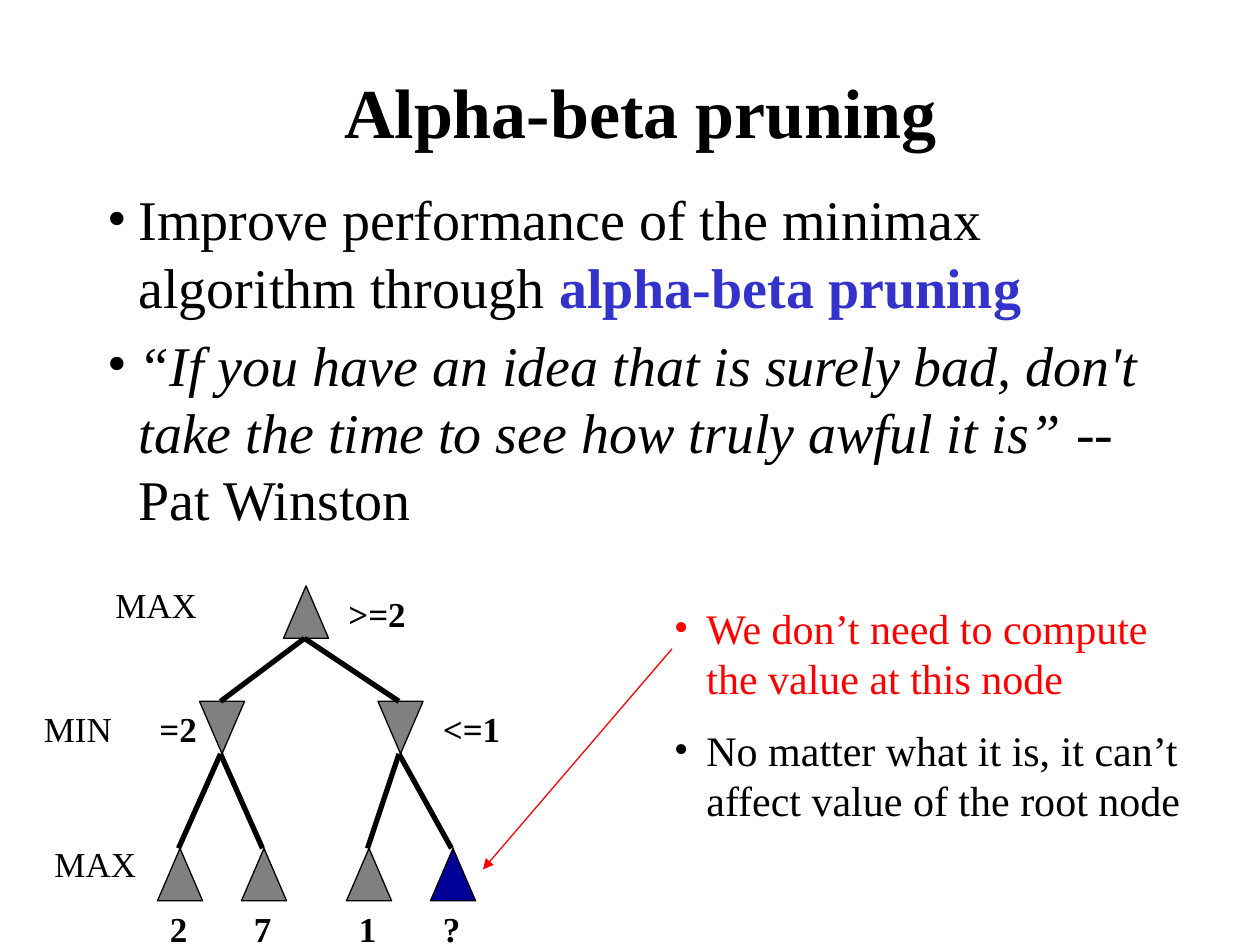
from lxml.etree import SubElement as Sub
from pptx import Presentation
from pptx.dml.color import RGBColor as Rgb
from pptx.enum.shapes import MSO_CONNECTOR as Conn, MSO_SHAPE as Geo
from pptx.enum.text import MSO_ANCHOR as Anchor, MSO_AUTO_SIZE as Fit, PP_ALIGN as Align
from pptx.oxml.ns import qn
from pptx.util import Pt

PX = 7620
FONT = "Times New Roman"
HEX = {"black": "000000", "gray": "808080", "navy": "000099",
       "blue": "3333CC", "red": "FF0000"}

TITLE = "Alpha-beta pruning"
POINTS = [
    [("Improve performance of the minimax algorithm through ", "black", False, False),
     ("alpha-beta pruning", "blue", True, False)],
    [("“If you have an idea that is surely bad, don't take the time to see "
      "how truly awful it is”", "black", False, True),
     (" -- Pat Winston", "black", False, False)],
]
NOTES = [
    [("We don’t need to compute the value at this node", "red", False, False)],
    [("No matter what it is, it can’t affect value of the root node",
      "black", False, False)],
]
ROOT = (270, 558)
MINS = [(190, 668), (360, 668)]
LEAVES = [(150, "2", 0), (230, "7", 0), (330, "1", 1), (410, "?", 1)]
LEAF_TOP, LEAF_TEXT = 808, 858
NODE_W, NODE_H, MID = 43, 50, 20
BOUNDS = [(140, 668, 60, "=2"), (320, 558, 79, ">=2"), (410, 668, 79, "<=1")]
LEVELS = [(98, 550, 102, "MAX"), (30, 668, 89, "MIN"), (40, 796, 102, "MAX")]
ARROW = ((640, 618), (460, 828))


def emu(*nums):
    return [round(n * PX) for n in nums]


def tint(name):
    return Rgb.from_string(HEX[name])


def style(para, size, bold=False):
    font = para.font
    font.name, font.size, font.bold = FONT, Pt(size), bold
    font.color.rgb = tint("black")


def place(shape, *box):
    shape.left, shape.top, shape.width, shape.height = emu(*box)


def bullets(frame, items, size, indent, gap):
    frame.word_wrap = True
    for i, parts in enumerate(items):
        para = frame.paragraphs[0] if i == 0 else frame.add_paragraph()
        props = para._p.get_or_add_pPr()
        props.set("marL", str(indent * PX))
        props.set("indent", str(-indent * PX))
        Sub(props, qn("a:buFont"), typeface=FONT)
        Sub(props, qn("a:buChar"), char="•")
        para.space_before = Pt(gap if i else 0)
        style(para, size)
        for text, color, bold, italic in parts:
            run = para.add_run()
            run.text = text
            run.font.color.rgb = tint(color)
            run.font.bold, run.font.italic = bold, italic


def label(x, y, w, text, bold):
    frame = slide.shapes.add_textbox(*emu(x, y, w, 52)).text_frame
    frame.word_wrap = False
    frame.auto_size = Fit.SHAPE_TO_FIT_TEXT
    para = frame.paragraphs[0]
    para.text = text
    style(para, 20, bold)


def node(x, y, color="gray", down=False):
    shape = slide.shapes.add_shape(Geo.ISOSCELES_TRIANGLE, *emu(x, y, NODE_W, NODE_H))
    shape.shadow.inherit = False
    shape.fill.solid()
    shape.fill.fore_color.rgb = tint(color)
    shape.line.color.rgb = tint("black")
    shape.line.width = Pt(0.75)
    if down:
        shape._element.spPr.xfrm.set("flipV", "1")


def link(start, end, color="black", width=3, head=False):
    line = slide.shapes.add_connector(Conn.STRAIGHT, *emu(*start, *end))
    line.line.color.rgb = tint(color)
    line.line.width = Pt(width)
    if head:
        Sub(line.line._get_or_add_ln(), qn("a:tailEnd"), type="triangle")
    Sub(line._element.spPr, qn("a:effectLst"))


deck = Presentation()
deck.slide_width, deck.slide_height = emu(1200, 900)
slide = deck.slides.add_slide(deck.slide_layouts[1])

title = slide.shapes.title
place(title, 100, 30, 1020, 150)
title.text_frame.vertical_anchor = Anchor.MIDDLE
title.text_frame.auto_size = Fit.NONE
head = title.text_frame.paragraphs[0]
head.text = TITLE
head.alignment = Align.CENTER
style(head, 40, True)

body = slide.placeholders[1]
place(body, 90, 170, 1020, 540)
body.text_frame.auto_size = Fit.NONE
bullets(body.text_frame, POINTS, 32, 30, 6.4)

node(*ROOT)
for x, y in MINS:
    node(x, y, down=True)
for x, value, side in LEAVES:
    node(x, LEAF_TOP, "navy" if value == "?" else "gray")
    label(x, LEAF_TEXT, 41, value, True)

for x, y in MINS:
    link((x + MID, y), (ROOT[0] + MID, ROOT[1] + NODE_H))
for x, value, side in LEAVES:
    px, py = MINS[side]
    link((x + MID, LEAF_TOP), (px + MID, py + NODE_H))

for bound in BOUNDS:
    label(*bound, True)
for level in LEVELS:
    label(*level, False)

side_box = slide.shapes.add_textbox(*emu(630, 568, 530, 230))
side_box.text_frame.auto_size = Fit.SHAPE_TO_FIT_TEXT
bullets(side_box.text_frame, NOTES, 24, 31, 12)
link(*ARROW, "red", 0.75, True)

deck.save("out.pptx")
